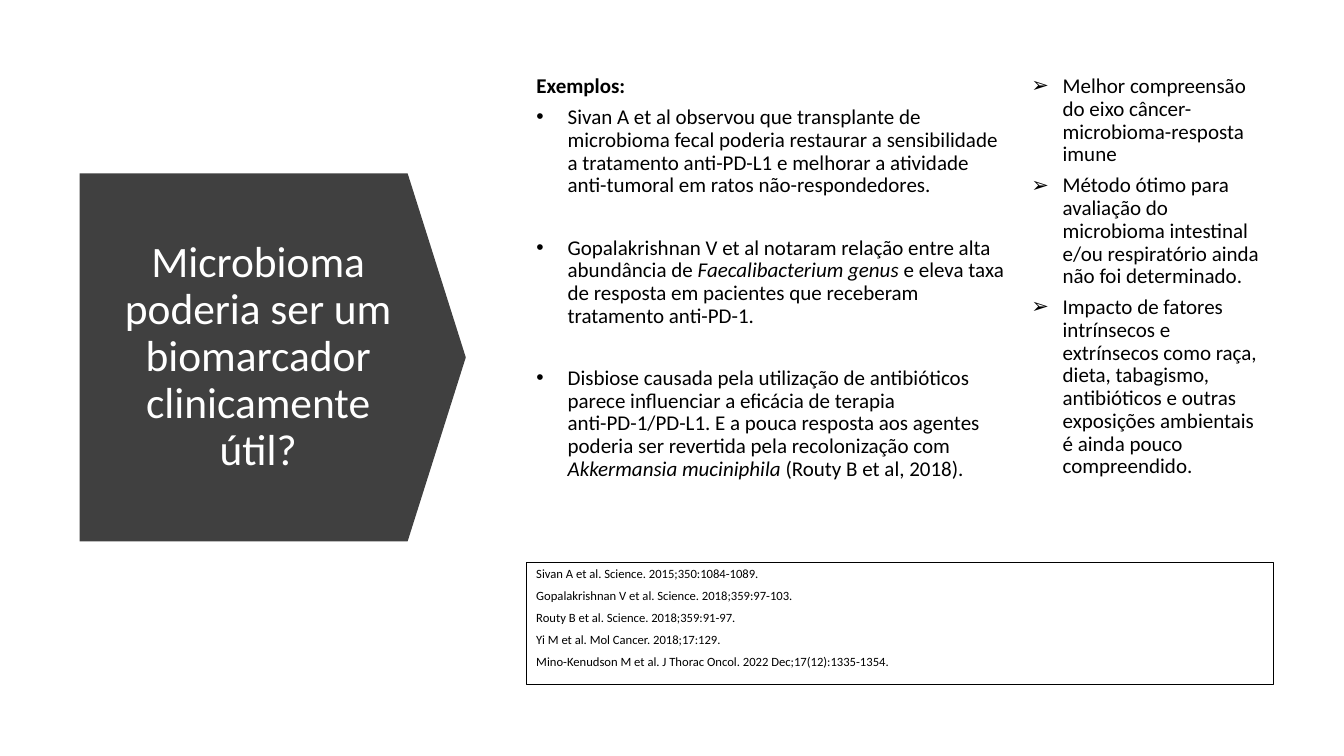
from dataclasses import dataclass

from lxml.etree import SubElement
from pptx import Presentation
from pptx.dml.color import RGBColor
from pptx.enum.shapes import MSO_SHAPE
from pptx.enum.text import MSO_ANCHOR, MSO_AUTO_SIZE, PP_ALIGN
from pptx.oxml.ns import qn
from pptx.util import Inches, Pt


@dataclass(frozen=True)
class Theme:
    font: str = "Calibri"
    dark: RGBColor = RGBColor(0x40, 0x40, 0x40)
    white: RGBColor = RGBColor(0xFF, 0xFF, 0xFF)
    black: RGBColor = RGBColor(0, 0, 0)
    title: float = 31
    body: float = 15
    reference: float = 9
    gap: float = 6
    wide_gap: float = 28.2
    hanging: float = 0.31


@dataclass(frozen=True)
class Para:
    """A paragraph; text between asterisks is italic."""
    text: str
    bullet: str = ""
    bold: bool = False
    after: float = 6


THEME = Theme()

EXAMPLES = [
    Para("Exemplos:", bold=True),
    Para("Sivan A et al observou que transplante de microbioma fecal poderia restaurar "
         "a sensibilidade a tratamento anti-PD-L1 e melhorar a atividade anti-tumoral "
         "em ratos não-respondedores.", "•", after=THEME.wide_gap),
    Para("Gopalakrishnan V et al notaram relação entre alta abundância de "
         "*Faecalibacterium genus *e eleva taxa de resposta em pacientes que receberam "
         "tratamento anti-PD-1.", "•", after=THEME.wide_gap),
    Para("Disbiose causada pela utilização de antibióticos parece influenciar a eficácia "
         "de terapia anti-PD-1/PD-L1. E a pouca resposta aos agentes poderia ser revertida "
         "pela recolonização com *Akkermansia muciniphila *(Routy B et al, 2018).", "•"),
]

CHALLENGES = [Para(text, "➢") for text in (
    "Melhor compreensão do eixo câncer-microbioma-resposta imune",
    "Método ótimo para avaliação do microbioma intestinal e/ou respiratório ainda "
    "não foi determinado.",
    "Impacto de fatores intrínsecos e extrínsecos como raça, dieta, tabagismo, "
    "antibióticos e outras exposições ambientais é ainda pouco compreendido.",
)]

REFERENCES = [Para(text) for text in (
    "Sivan A et al. Science. 2015;350:1084-1089.",
    "Gopalakrishnan V et al. Science. 2018;359:97-103.",
    "Routy B et al. Science. 2018;359:91-97.",
    "Yi M et al. Mol Cancer. 2018;17:129.",
    "Mino-Kenudson M et al. J Thorac Oncol. 2022 Dec;17(12):1335-1354.",
)]


def place(sp, left: float, top: float, width: float, height: float) -> None:
    sp.left, sp.top, sp.width, sp.height = map(Inches, (left, top, width, height))


def set_bullet(p, char: str) -> None:
    """Give the paragraph a hanging bullet, or none if char is empty."""
    pPr = p._p.get_or_add_pPr()
    indent = Inches(THEME.hanging) if char else 0
    pPr.set("marL", str(indent))
    pPr.set("indent", str(-indent))
    if char:
        SubElement(pPr, qn("a:buFont")).set("typeface", "Arial")
        SubElement(pPr, qn("a:buChar")).set("char", char)
    else:
        SubElement(pPr, qn("a:buNone"))


def write(sp, paras: list[Para], *, size: float, color: RGBColor = THEME.black,
          align: PP_ALIGN = PP_ALIGN.LEFT, anchor: MSO_ANCHOR = MSO_ANCHOR.TOP) -> None:
    tf = sp.text_frame
    tf.word_wrap = True
    tf.auto_size = MSO_AUTO_SIZE.NONE
    tf.vertical_anchor = anchor
    for n, para in enumerate(paras):
        p = tf.add_paragraph() if n else tf.paragraphs[0]
        set_bullet(p, para.bullet)
        p.alignment = align
        p.line_spacing = 0.9
        p.space_before = Pt(0)
        p.space_after = Pt(para.after)
        for k, text in enumerate(para.text.split("*")):
            r = p.add_run()
            r.text = text
            r.font.name = THEME.font
            r.font.size = Pt(size)
            r.font.color.rgb = color
            r.font.bold = para.bold
            r.font.italic = k % 2 == 1


def add_title_arrow(s) -> None:
    """Put the right-pointing block behind the title."""
    sp = s.shapes.add_shape(MSO_SHAPE.DOWN_ARROW, 0, 0, 0, 0)
    place(sp, 0.88, 1.63, 3.65, 3.83)
    sp.rotation = 270
    sp.adjustments[0], sp.adjustments[1] = 1, 0.158
    sp.shadow.inherit = False
    sp.fill.solid()
    sp.fill.fore_color.rgb = THEME.dark
    sp.line.fill.background()
    s.shapes.title.element.addprevious(sp.element)


def add_references(s) -> None:
    sp = s.shapes.add_shape(MSO_SHAPE.RECTANGLE, 0, 0, 0, 0)
    place(sp, 5.22, 5.58, 7.41, 1.21)
    sp.shadow.inherit = False
    sp.fill.solid()
    sp.fill.fore_color.rgb = THEME.white
    sp.line.color.rgb = THEME.black
    sp.line.width = Pt(1)
    write(sp, REFERENCES, size=THEME.reference)


def main() -> None:
    prs = Presentation()
    prs.slide_width, prs.slide_height = Inches(13.33), Inches(7.5)
    s = prs.slides.add_slide(prs.slide_layouts.get_by_name("Two Content"))
    title, examples, challenges = s.placeholders

    add_title_arrow(s)
    place(title, 1.12, 2.15, 2.88, 2.79)
    write(title, [Para("Microbioma poderia ser um biomarcador clinicamente útil?")],
          size=THEME.title, color=THEME.white, align=PP_ALIGN.CENTER,
          anchor=MSO_ANCHOR.MIDDLE)
    place(examples, 5.22, 0.7, 4.86, 4.8)
    write(examples, EXAMPLES, size=THEME.body)
    place(challenges, 10.13, 0.7, 2.51, 4.8)
    write(challenges, CHALLENGES, size=THEME.body)
    add_references(s)
    prs.save("out.pptx")


if __name__ == "__main__":
    main()
